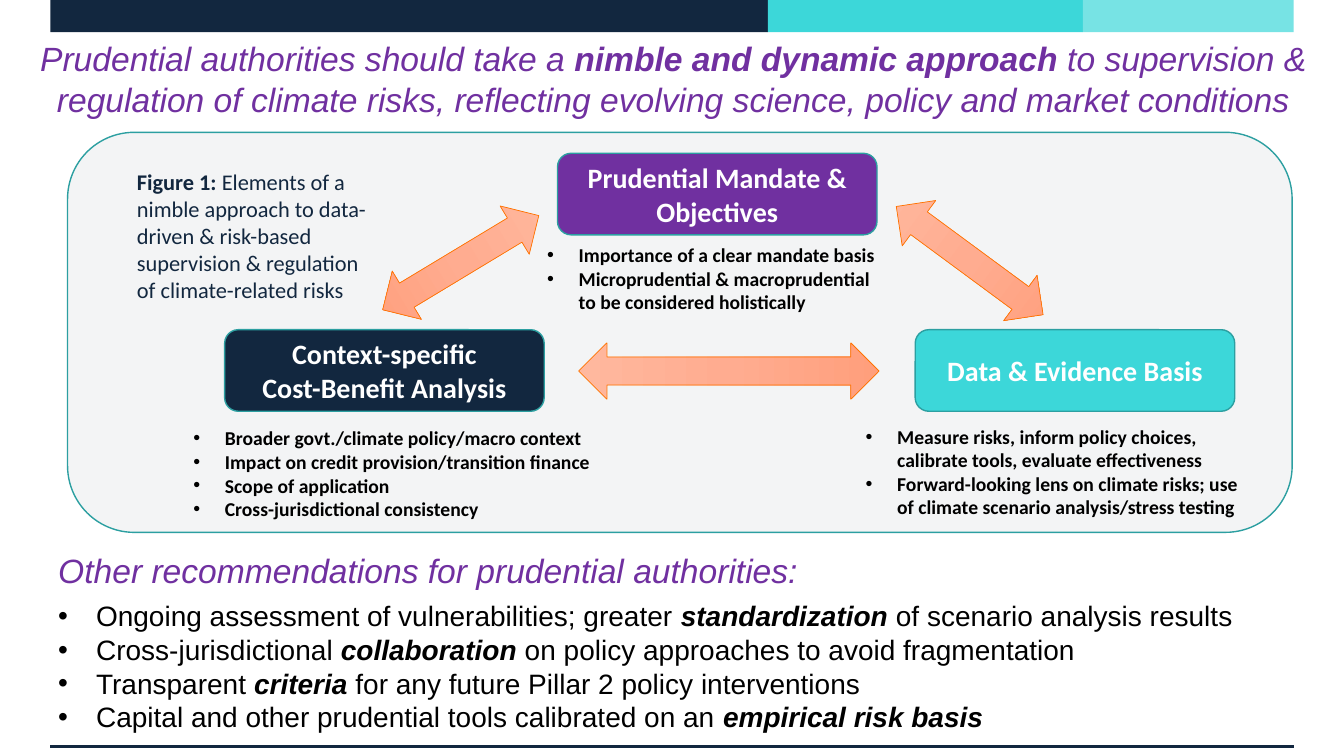
from copy import deepcopy
from dataclasses import dataclass

from lxml.etree import SubElement
from pptx import Presentation
from pptx.dml.color import RGBColor
from pptx.enum.shapes import MSO_CONNECTOR, MSO_SHAPE
from pptx.enum.text import MSO_ANCHOR, MSO_AUTO_SIZE, PP_ALIGN
from pptx.oxml.ns import qn
from pptx.shapes.autoshape import Shape
from pptx.slide import Slide
from pptx.text.text import TextFrame, _Paragraph as Paragraph
from pptx.util import Pt

COLORS = {
    "navy": "12273F", "teal": "3CD7D9", "aqua": "77E3E4", "purple": "7030A0",
    "panel": "F3F4F5", "outline": "2C9FA1", "white": "FFFFFF", "black": "000000",
    "arrow_edge": "FF7300", "arrow_start": "FFB89E", "arrow_middle": "FFAC90",
    "arrow_end": "FF9F7C",
}
PILLAR_WIDTH, PILLAR_HEIGHT = 228.25, 58.25
ARROW_WIDTH = 40.25


@dataclass(frozen=True)
class Box:
    left: float
    top: float
    width: float
    height: float

    def lengths(self) -> tuple[Pt, Pt, Pt, Pt]:
        return Pt(self.left), Pt(self.top), Pt(self.width), Pt(self.height)


@dataclass(frozen=True)
class Style:
    font: str
    size: float
    color: str
    bold: bool = False
    italic: bool = False
    emphasis_italic: bool = False


@dataclass(frozen=True)
class Pillar:
    lines: list[str]
    left: float
    top: float
    color: str
    details: list[str]
    details_box: Box


@dataclass(frozen=True)
class DoubleArrow:
    left: float
    top: float
    length: float
    rotation: float


PILLAR_STYLE = Style("Calibri", 20, "white", bold=True)
DETAIL_STYLE = Style("Calibri", 14, "black", bold=True)
CAPTION_STYLE = Style("Calibri", 16, "navy")
HEADING_STYLE = Style("Arial", 24, "purple", italic=True, emphasis_italic=True)
ADVICE_STYLE = Style("Arial", 20, "black", emphasis_italic=True)

BANDS = [
    (Box(36, 0, 512.5, 23), "navy"),
    (Box(548.5, 0, 225, 23), "teal"),
    (Box(773.5, 0, 150.5, 23), "aqua"),
]
PILLARS = [
    Pillar(["Prudential Mandate & Objectives"], 398.25, 109.5, "purple",
           ["Importance of a clear mandate basis",
            "Microprudential & macroprudential to be considered holistically"],
           Box(383.75, 170, 258.5, 58.25)),
    Pillar(["Data & Evidence Basis"], 653.75, 235.5, "teal",
           ["Measure risks, inform policy choices, calibrate tools, evaluate effectiveness",
            "Forward-looking lens on climate risks; use of climate scenario analysis/stress testing"],
           Box(611.25, 299.75, 291.5, 75)),
    Pillar(["Context-specific", "Cost-Benefit Analysis"], 160.5, 235.5, "navy",
           ["Broader govt./climate policy/macro context",
            "Impact on credit provision/transition finance",
            "Scope of application",
            "Cross-jurisdictional consistency"],
           Box(131, 301, 339, 75)),
]
ARROWS = [
    DoubleArrow(672.5, 121, 130.25, 306.4),
    DoubleArrow(309, 122.5, 130.25, 58.9),
    DoubleArrow(500.5, 157.75, 214.5, 270),
]
# Text between asterisks is emphasised.
TITLE = ("Prudential authorities should take a *nimble and dynamic approach *to supervision & "
         "regulation of climate risks, reflecting evolving science, policy and market conditions")
CAPTION = ("*Figure 1: *Elements of a nimble approach to data-driven & risk-based "
           "supervision & regulation of climate-related risks")
RECOMMENDATIONS = [
    "Ongoing assessment of vulnerabilities; greater *standardization* of scenario analysis results",
    "Cross-jurisdictional *collaboration* on policy approaches to avoid fragmentation",
    "Transparent *criteria *for any future Pillar 2 policy interventions",
    "Capital and other prudential tools calibrated on an *empirical risk basis*",
]


def rgb(name: str) -> RGBColor:
    return RGBColor.from_string(COLORS[name])


def add_panel(slide: Slide, kind: MSO_SHAPE, box: Box, color: str, outlined: bool = True) -> Shape:
    panel = slide.shapes.add_shape(kind, *box.lengths())
    panel.shadow.inherit = False
    panel.fill.solid()
    panel.fill.fore_color.rgb = rgb(color)
    if outlined:
        panel.line.color.rgb = rgb("outline")
        panel.line.width = Pt(1)
    else:
        panel.line.fill.background()
    return panel


def write(paragraph: Paragraph, text: str, style: Style) -> None:
    """Fill a paragraph, emphasising the parts between asterisks."""
    for index, part in enumerate(text.split("*")):
        if not part:
            continue
        emphasised = index % 2 == 1
        run = paragraph.add_run()
        run.text = part
        run.font.name = style.font
        run.font.size = Pt(style.size)
        run.font.color.rgb = rgb(style.color)
        run.font.bold = style.bold or emphasised
        run.font.italic = style.italic or (emphasised and style.emphasis_italic)


def set_bullet(paragraph: Paragraph, indent: float) -> None:
    properties = paragraph._p.get_or_add_pPr()
    properties.set("marL", str(Pt(indent)))
    properties.set("indent", str(-Pt(indent)))
    SubElement(properties, qn("a:buFont")).set("typeface", "Arial")
    SubElement(properties, qn("a:buChar")).set("char", "•")


def add_lines(frame: TextFrame, lines: list[str], style: Style, indent: float = 0) -> None:
    """Append paragraphs, using the first one of the frame while it is empty."""
    for line in lines:
        paragraph = frame.paragraphs[-1]
        if paragraph.runs:
            paragraph = frame.add_paragraph()
        if indent:
            set_bullet(paragraph, indent)
        write(paragraph, line, style)


def add_text(slide: Slide, box: Box, lines: list[str], style: Style, indent: float = 0) -> TextFrame:
    frame = slide.shapes.add_textbox(*box.lengths()).text_frame
    frame.word_wrap = True
    frame.auto_size = MSO_AUTO_SIZE.SHAPE_TO_FIT_TEXT
    add_lines(frame, lines, style, indent)
    return frame


def add_pillar(slide: Slide, pillar: Pillar) -> None:
    box = Box(pillar.left, pillar.top, PILLAR_WIDTH, PILLAR_HEIGHT)
    frame = add_panel(slide, MSO_SHAPE.ROUNDED_RECTANGLE, box, pillar.color).text_frame
    frame.word_wrap = True
    frame.vertical_anchor = MSO_ANCHOR.MIDDLE
    add_lines(frame, pillar.lines, PILLAR_STYLE)
    for paragraph in frame.paragraphs:
        paragraph.alignment = PP_ALIGN.CENTER
    add_text(slide, pillar.details_box, pillar.details, DETAIL_STYLE, 22.5)


def add_double_arrow(slide: Slide, arrow: DoubleArrow) -> None:
    box = Box(arrow.left, arrow.top, ARROW_WIDTH, arrow.length)
    shape = slide.shapes.add_shape(MSO_SHAPE.UP_DOWN_ARROW, *box.lengths())
    shape.rotation = arrow.rotation
    shape.shadow.inherit = False
    shape.line.color.rgb = rgb("arrow_edge")
    shape.line.width = Pt(0.5)
    shape.fill.gradient()
    shape.fill.gradient_angle = 270
    stops = shape._element.spPr.find(".//" + qn("a:gsLst"))
    middle = deepcopy(stops[0])
    middle.set("pos", "50000")
    stops.insert(1, middle)
    for stop, part in zip(shape.fill.gradient_stops, ("start", "middle", "end")):
        stop.color.rgb = rgb(f"arrow_{part}")


def add_footer_rule(slide: Slide) -> None:
    rule = slide.shapes.add_connector(MSO_CONNECTOR.STRAIGHT, Pt(36), Pt(533), Pt(924), Pt(533))
    rule.line.color.rgb = rgb("navy")
    rule.line.width = Pt(2.25)
    SubElement(rule._element.spPr, qn("a:effectLst"))


def main() -> None:
    deck = Presentation()
    deck.slide_width, deck.slide_height = Pt(960), Pt(540)
    slide = deck.slides.add_slide(deck.slide_layouts[6])
    for box, color in BANDS:
        add_panel(slide, MSO_SHAPE.RECTANGLE, box, color, outlined=False)
    add_footer_rule(slide)
    add_panel(slide, MSO_SHAPE.ROUNDED_RECTANGLE, Box(48.25, 94.5, 874.75, 285.75), "panel")
    for pillar in PILLARS:
        add_pillar(slide, pillar)
    for arrow in ARROWS:
        add_double_arrow(slide, arrow)
    advice = add_text(slide, Box(34.5, 389.5, 902, 185),
                      ["Other recommendations for prudential authorities:"], HEADING_STYLE)
    add_lines(advice, RECOMMENDATIONS, ADVICE_STYLE, 27)
    advice.paragraphs[1].space_before = Pt(6)
    add_text(slide, Box(90.75, 116.75, 182.25, 104.5), [CAPTION], CAPTION_STYLE)
    title = add_text(slide, Box(15, 23.75, 931.75, 65.5), [TITLE], HEADING_STYLE)
    title.paragraphs[0].alignment = PP_ALIGN.CENTER
    deck.save("out.pptx")


if __name__ == "__main__":
    main()
